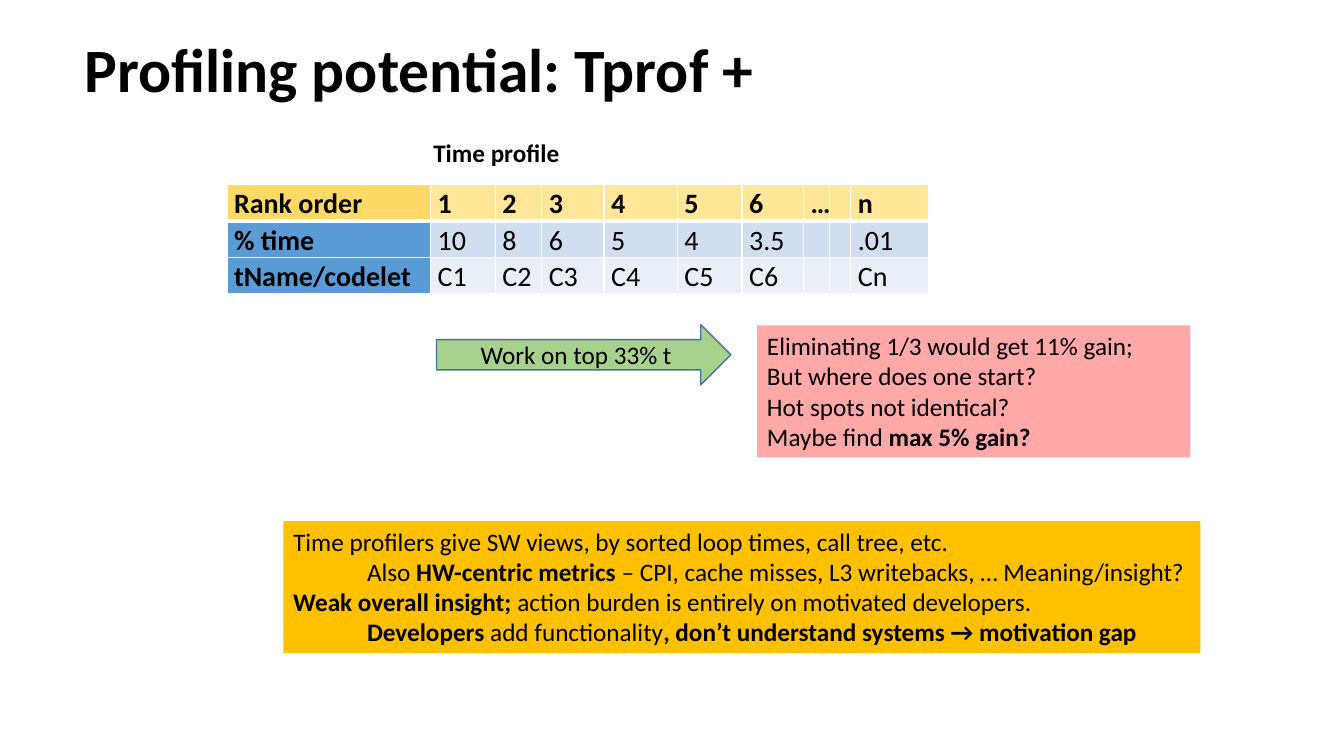
import pptx
import pptx.dml.color
import pptx.enum.shapes
import pptx.enum.text
import pptx.oxml
import pptx.oxml.ns
import pptx.util
from pptx.dml.color import RGBColor
from pptx.enum.shapes import MSO_SHAPE
from pptx.enum.text import MSO_ANCHOR, PP_ALIGN
from pptx.util import Cm

BLACK = RGBColor(0x00, 0x00, 0x00)
WHITE = RGBColor(0xFF, 0xFF, 0xFF)
RANK_LABEL = RGBColor(0xFF, 0xD9, 0x66)
RANK_CELL = RGBColor(0xFF, 0xE6, 0x99)
ROW_LABEL = RGBColor(0x5B, 0x9B, 0xD5)
TIME_CELL = RGBColor(0xD2, 0xDE, 0xEF)
NAME_CELL = RGBColor(0xEA, 0xEF, 0xF7)
GREEN = RGBColor(0xA9, 0xD1, 0x8E)
ARROW_EDGE = RGBColor(0x43, 0x73, 0x9E)
RED = RGBColor(0xFF, 0x00, 0x00)
GOLD = RGBColor(0xFF, 0xC0, 0x00)

COLUMN_WIDTHS = [5.13, 1.63, 1.17, 1.57, 1.85, 1.63, 1.55, 0.66, 0.53, 1.96]
ROW_HEIGHT = 0.92
# Each row: texts, label colour and opacity, value colour and opacity
PROFILE_ROWS = [
    (["Rank order", "1", "2", "3", "4", "5", "6", "…", "", "n"],
     (RANK_LABEL, 64), (RANK_CELL, 79)),
    (["% time", "10", "8", "6", "5", "4", "3.5", "", "", ".01"],
     (ROW_LABEL, 64), (TIME_CELL, 100)),
    (["tName/codelet", "C1", "C2", "C3", "C4", "C5", "C6", "", "", "Cn"],
     (ROW_LABEL, 64), (NAME_CELL, 100)),
]

GAIN_LINES = [
    "Eliminating 1/3 would get 11% gain;",
    "But where does one start?",
    "Hot spots not identical?",
    ["Maybe find ", ("max 5% gain?", True)],
]
INSIGHT_LINES = [
    "Time profilers give SW views, by sorted loop times, call tree, etc.",
    ["Also ", ("HW-centric metrics ", True),
     "– CPI, cache misses, L3 writebacks, … Meaning/insight?"],
    [("Weak overall insight;", True),
     " action burden is entirely on motivated developers."],
    [("Developers ", True), "add functionality",
     (", don’t understand systems → motivation gap", True)],
]


def write_text(frame, lines, size=18, bold=False, align=PP_ALIGN.LEFT,
               anchor=MSO_ANCHOR.TOP, spacing=None, indents=()):
    """Write lines; a line is a string or a list of strings and (string, bold) pairs."""
    frame.word_wrap = True
    frame.vertical_anchor = anchor
    for number, line in enumerate(lines):
        paragraph = frame.paragraphs[0] if number == 0 else frame.add_paragraph()
        paragraph.alignment = align
        paragraph.line_spacing = spacing
        paragraph.font.size = pptx.util.Pt(size)
        if number < len(indents):
            paragraph._p.get_or_add_pPr().set("marL", str(Cm(indents[number])))
        for part in [line] if isinstance(line, str) else line:
            words, strong = (part, bold) if isinstance(part, str) else part
            run = paragraph.add_run()
            run.text = words
            run.font.name = "Calibri"
            run.font.size = pptx.util.Pt(size)
            run.font.bold = strong
            run.font.color.rgb = BLACK


def paint(fill, colour, opacity=100):
    fill.solid()
    fill.fore_color.rgb = colour
    if opacity < 100:
        colour_tag = fill._xPr.find(".//" + pptx.oxml.ns.qn("a:srgbClr"))
        alpha = pptx.oxml.parse_xml(
            f'<a:alpha {pptx.oxml.ns.nsdecls("a")} val="{opacity * 1000}"/>')
        colour_tag.append(alpha)


def add_label(slide, box, lines, **text_format):
    label = slide.shapes.add_textbox(*map(Cm, box))
    write_text(label.text_frame, lines, **text_format)


def add_panel(slide, kind, box, lines, colour, opacity=100, edge=None, **text_format):
    panel = slide.shapes.add_shape(kind, *map(Cm, box))
    panel.shadow.inherit = False
    paint(panel.fill, colour, opacity)
    if edge is None:
        panel.line.fill.background()
    else:
        panel.line.color.rgb = edge
        panel.line.width = pptx.util.Pt(1)
    write_text(panel.text_frame, lines, **text_format)


def add_borders(cell, **widths):
    """Draw white cell borders; widths are points by side L, R, T, B."""
    properties = cell._tc.get_or_add_tcPr()
    for side, width in widths.items():
        properties.append(pptx.oxml.parse_xml(
            f'<a:ln{side} {pptx.oxml.ns.nsdecls("a")} w="{pptx.util.Pt(width)}">'
            f'<a:solidFill><a:srgbClr val="{WHITE}"/></a:solidFill></a:ln{side}>'))


def add_profile_table(slide, left, top):
    table = slide.shapes.add_table(
        len(PROFILE_ROWS), len(COLUMN_WIDTHS), Cm(left), Cm(top),
        Cm(sum(COLUMN_WIDTHS)), Cm(ROW_HEIGHT * len(PROFILE_ROWS))).table
    table.first_row = False
    table.horz_banding = False
    for column, width in zip(table.columns, COLUMN_WIDTHS):
        column.width = Cm(width)
    for r, (texts, label_fill, value_fill) in enumerate(PROFILE_ROWS):
        table.rows[r].height = Cm(ROW_HEIGHT)
        for c, text in enumerate(texts):
            cell = table.cell(r, c)
            cell.margin_left = cell.margin_right = Cm(0.18)
            cell.margin_top = cell.margin_bottom = 0
            add_borders(cell, L=1, R=1, T=3 if r == 1 else 1, B=3 if r == 0 else 1)
            paint(cell.fill, *(label_fill if c == 0 else value_fill))
            write_text(cell.text_frame, [text] if text else [[]], size=20,
                       bold=r == 0 or c == 0, spacing=1.07)


def main():
    deck = pptx.Presentation()
    deck.slide_width, deck.slide_height = Cm(33.87), Cm(19.05)
    slide = deck.slides.add_slide(deck.slide_layouts[6])

    add_label(slide, (1.88, 0, 29.21, 3.68), ["Profiling potential: Tprof +"],
              size=44, bold=True, anchor=MSO_ANCHOR.MIDDLE, spacing=0.9)
    add_profile_table(slide, 5.72, 4.65)
    add_label(slide, (10.67, 3.33, 6.1, 1.02), ["Time profile"], bold=True)
    add_panel(slide, MSO_SHAPE.RIGHT_ARROW, (11, 8.18, 7.42, 1.52),
              ["Work on top 33% t"], GREEN, edge=ARROW_EDGE,
              align=PP_ALIGN.CENTER, anchor=MSO_ANCHOR.MIDDLE)
    add_panel(slide, MSO_SHAPE.RECTANGLE, (19.08, 8.2, 10.92, 3.33),
              GAIN_LINES, RED, opacity=34)
    add_panel(slide, MSO_SHAPE.RECTANGLE, (7.14, 13.13, 23.11, 3.33),
              INSIGHT_LINES, GOLD, indents=(0, 1.86, 0, 1.86))

    deck.save("out.pptx")


if __name__ == "__main__":
    main()
